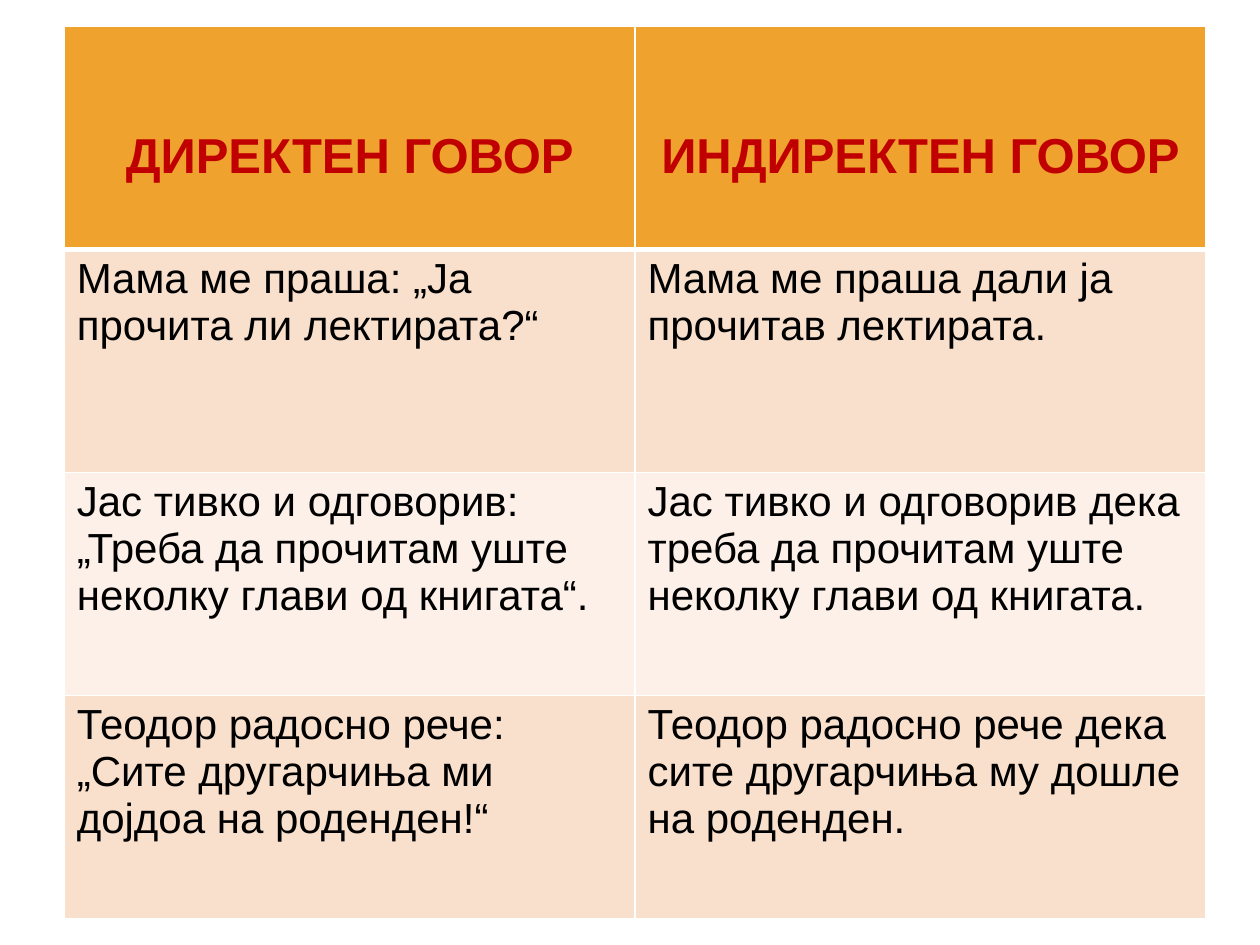
from lxml import etree
from pptx import Presentation
from pptx import util as u
from pptx.dml.color import RGBColor
from pptx.enum import text
from pptx.oxml.ns import qn

COLORS = {"header": "F0A22E", "odd": "F9E0CD", "even": "FCF0E8",
          "title": "C00000", "body": "000000", "border": "FFFFFF"}
ROWS = [
    ("ДИРЕКТЕН ГОВОР", "ИНДИРЕКТЕН ГОВОР"),
    ("Мама ме праша: „Ја прочита ли лектирата?“",
     "Мама ме праша дали ја прочитав лектирата."),
    ("Јас тивко и одговорив: „Треба да прочитам уште неколку глави од книгата“.",
     "Јас тивко и одговорив дека треба да прочитам уште неколку глави од книгата."),
    ("Теодор радосно рече: „Сите другарчиња ми дојдоа на роденден!“",
     "Теодор радосно рече дека сите другарчиња му дошле на роденден."),
]
COL_W, ROW_H = u.Inches(4.53), u.Inches(1.77)


def add_border(cell, index, side, width):
    ln = etree.Element(qn("a:ln" + side), w=str(u.Pt(width)))
    fill = etree.SubElement(ln, qn("a:solidFill"))
    etree.SubElement(fill, qn("a:srgbClr"), val=COLORS["border"])
    cell._tc.get_or_add_tcPr().insert(index, ln)


prs = Presentation()
prs.slide_width, prs.slide_height = u.Inches(10), u.Inches(7.5)
s = prs.slides.add_slide(prs.slide_layouts[6])

table = s.shapes.add_table(len(ROWS), 2, u.Inches(0.51), u.Inches(0.21),
                           2 * COL_W, len(ROWS) * ROW_H).table
for col in table.columns:
    col.width = COL_W

for i, row in enumerate(ROWS):
    table.rows[i].height = ROW_H
    header = i == 0
    fill = "header" if header else "odd" if i % 2 else "even"
    for j, words in enumerate(row):
        cell = table.cell(i, j)
        cell.fill.solid()
        cell.fill.fore_color.rgb = RGBColor.from_string(COLORS[fill])
        widths = {"L": 1, "R": 1, "T": 3 if i == 1 else 1, "B": 3 if header else 1}
        for k, (side, width) in enumerate(widths.items()):
            add_border(cell, k, side, width)
        p = cell.text_frame.paragraphs[0]
        if header:
            cell.vertical_anchor = text.MSO_ANCHOR.MIDDLE
            cell.margin_top = u.Inches(0.34)
            p.alignment = text.PP_ALIGN.CENTER
        r = p.add_run()
        r.text = words
        r.font.name = "Arial"
        r.font.size = u.Pt(28 if header else 24)
        r.font.bold = header
        r.font.color.rgb = RGBColor.from_string(COLORS["title" if header else "body"])

prs.save("out.pptx")
